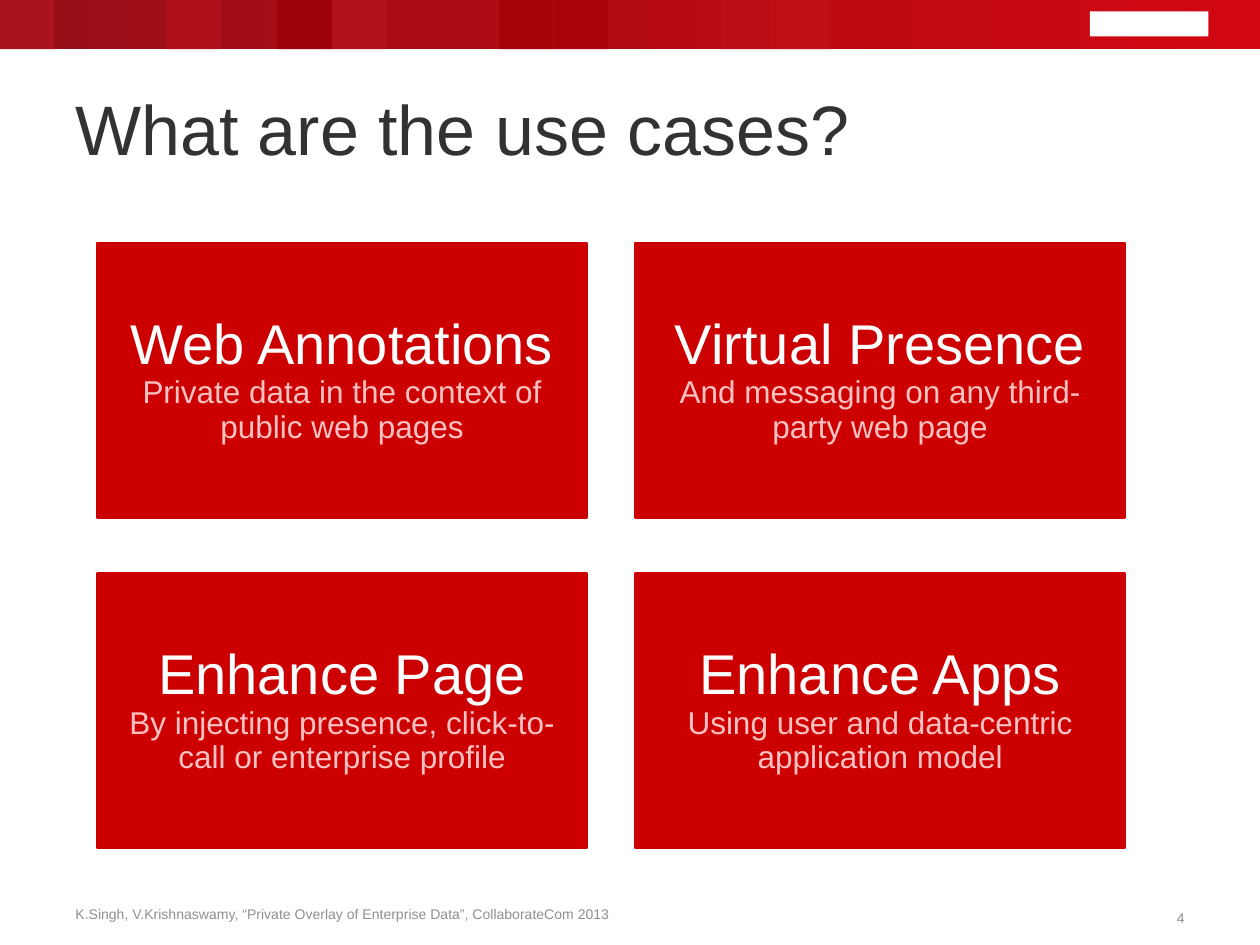
import dataclasses

import pptx
import pptx.dml.color
import pptx.enum.shapes
import pptx.enum.text
import pptx.util

ALIGN = pptx.enum.text.PP_ALIGN
ANCHOR = pptx.enum.text.MSO_ANCHOR


@dataclasses.dataclass(frozen=True)
class Theme:
    font: str = "Arial"
    title_size: int = 40
    heading_size: int = 32
    body_size: int = 18
    footer_size: int = 8
    title: str = "323232"
    footer: str = "8F8F8F"
    card: str = "CC0000"
    white: str = "FFFFFF"
    card_body: str = "FFC2C2"
    banner_start: str = "960E17"
    banner_end: str = "D10811"


@dataclasses.dataclass(frozen=True)
class Box:
    """Position and size in inches."""
    left: float
    top: float
    width: float
    height: float

    def lengths(self):
        return [pptx.util.Inches(value) for value in dataclasses.astuple(self)]


THEME = Theme()
PAGE = Box(0, 0, 10, 7.5)
STRIPE_PITCH = 0.44
# Grid column of each banner stripe, and its colour
STRIPES = {
    0: "A9141C", 3: "AE1119", 5: "9D020A", 6: "B1121A",
    9: "A5020A", 10: "A8030B", 13: "BA0D15", 14: "BE0E16",
}
CARDS = [
    ("Web Annotations", "Private data in the context of public web pages"),
    ("Virtual Presence", "And messaging on any third-party web page"),
    ("Enhance Page", "By injecting presence, click-to-call or enterprise profile"),
    ("Enhance Apps", "Using user and data-centric application model"),
]


def rgb(value):
    return pptx.dml.color.RGBColor.from_string(value)


def write(para, text, *, size, color, align=ALIGN.LEFT):
    para.alignment = align
    para.line_spacing = 0.9
    span = para.add_run()
    span.text = text
    span.font.name = THEME.font
    span.font.size = pptx.util.Pt(size)
    span.font.color.rgb = rgb(color)


def add_text(page, box, text, *, anchor=ANCHOR.MIDDLE, wrap=False, **style):
    frame = page.shapes.add_textbox(*box.lengths()).text_frame
    frame.word_wrap = wrap
    frame.vertical_anchor = anchor
    write(frame.paragraphs[0], text, **style)


def add_rectangle(page, box, color):
    shape = page.shapes.add_shape(
        pptx.enum.shapes.MSO_SHAPE.RECTANGLE, *box.lengths())
    shape.shadow.inherit = False
    shape.fill.solid()
    shape.fill.fore_color.rgb = rgb(color)
    shape.line.fill.background()
    return shape


def add_banner(page, box):
    """Red gradient band with stripes and a plain brand mark."""
    band = add_rectangle(page, box, THEME.banner_end)
    band.fill.gradient()
    band.fill.gradient_angle = 0
    colors = (THEME.banner_start, THEME.banner_end)
    for stop, color, position in zip(band.fill.gradient_stops, colors, (0, 1)):
        stop.color.rgb = rgb(color)
        stop.position = position
    for column, color in STRIPES.items():
        left = box.left + column * STRIPE_PITCH
        add_rectangle(page, Box(left, box.top, 0.43, box.height), color)
    mark = Box(box.left + 8.65, box.top + 0.1, 0.94, 0.2)
    add_rectangle(page, mark, THEME.white)


def add_card(page, box, heading, body):
    card = add_rectangle(page, box, THEME.card)
    card.line.color.rgb = rgb(THEME.card)
    card.line.width = pptx.util.Pt(1.5)
    frame = card.text_frame
    frame.word_wrap = True
    frame.vertical_anchor = ANCHOR.MIDDLE
    frame.margin_left = frame.margin_right = pptx.util.Inches(0.17)
    write(frame.paragraphs[0], heading, size=THEME.heading_size,
          color=THEME.white, align=ALIGN.CENTER)
    write(frame.add_paragraph(), body, size=THEME.body_size,
          color=THEME.card_body, align=ALIGN.CENTER)


def add_card_grid(page, box, cards, columns=2, gap_x=0.38, gap_y=0.44):
    rows = -(-len(cards) // columns)
    width = (box.width - gap_x * (columns - 1)) / columns
    height = (box.height - gap_y * (rows - 1)) / rows
    for index, (heading, body) in enumerate(cards):
        row, column = divmod(index, columns)
        cell = Box(box.left + column * (width + gap_x),
                   box.top + row * (height + gap_y), width, height)
        add_card(page, cell, heading, body)


def add_footer(page, box, citation, number):
    style = {"size": THEME.footer_size, "color": THEME.footer}
    add_text(page, Box(box.left, box.top, 4.51, 0.22), citation, **style)
    number_width = 0.34
    number_box = Box(box.left + box.width - number_width, box.top + 0.03,
                     number_width, 0.22)
    add_text(page, number_box, number, wrap=True, align=ALIGN.RIGHT, **style)


def main():
    deck = pptx.Presentation()
    deck.slide_width, deck.slide_height = PAGE.lengths()[2:]
    page = deck.slides.add_slide(deck.slide_layouts[6])
    add_banner(page, Box(0, -0.01, PAGE.width, 0.4))
    add_footer(page, Box(0.5, 7.15, 9, 0.25),
               "K.Singh, V.Krishnaswamy, “Private Overlay of Enterprise Data”, "
               "CollaborateCom 2013", "4")
    add_text(page, Box(0.5, 0.48, 9, 0.92), "What are the use cases?",
             anchor=ANCHOR.BOTTOM, wrap=True,
             size=THEME.title_size, color=THEME.title)
    add_card_grid(page, Box(0.77, 1.93, 8.16, 4.8), CARDS)
    deck.save("out.pptx")


if __name__ == "__main__":
    main()
